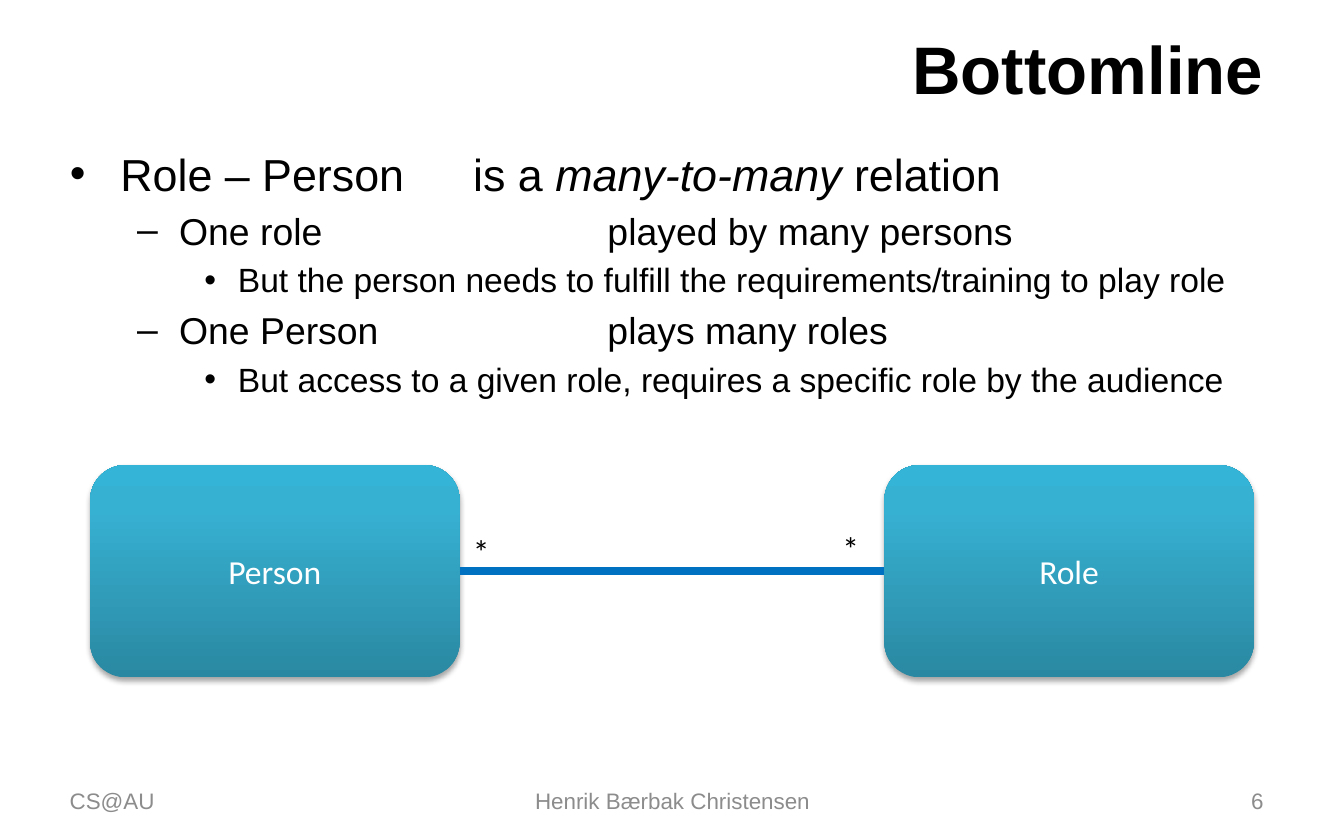
from typing import NamedTuple

from pptx import Presentation
from pptx import util as u
from pptx.dml.color import RGBColor
from pptx.enum import shapes, text
from pptx.oxml import parse_xml
from pptx.oxml.ns import nsdecls, qn

Inches, Pt = u.Inches, u.Pt
LEFT, CENTER, RIGHT = text.PP_ALIGN.LEFT, text.PP_ALIGN.CENTER, text.PP_ALIGN.RIGHT
TOP, MIDDLE = text.MSO_ANCHOR.TOP, text.MSO_ANCHOR.MIDDLE
BLACK, GREY, WHITE, BLUE = "000000", "8C8C8C", "FFFFFF", "0070C0"
GRADIENT = [(0, "2A88A2"), (80, "37B1D2"), (100, "34B4D6")]
LEVEL_SIZES = [24, 20, 18]
TAB_STOPS = [1, 2, 3, 4, 5]


class Label(NamedTuple):
    words: str
    left: float
    top: float
    width: float
    height: float
    size: int
    font: str
    color: str
    align: text.PP_ALIGN = LEFT
    anchor: text.MSO_ANCHOR = TOP


class Entity(NamedTuple):
    name: str
    left: float


class Bullet(NamedTuple):
    level: int
    runs: list[tuple[str, bool]]


BULLETS = [
    Bullet(0, [("Role – Person\tis a ", False), ("many-to-many", True), (" relation", False)]),
    Bullet(1, [("One role\t\t\tplayed by many persons", False)]),
    Bullet(2, [("But the person needs to fulfill the requirements/training to play role", False)]),
    Bullet(1, [("One Person\t\tplays many roles", False)]),
    Bullet(2, [("But access to a given role, requires a specific role by the audience", False)]),
]
LABELS = [
    Label("CS@AU", 0.42, 5.79, 2.33, 0.33, 12, "Arial", GREY, LEFT, MIDDLE),
    Label("Henrik Bærbak Christensen", 3.42, 5.79, 3.17, 0.33, 12, "Arial", GREY, CENTER, MIDDLE),
    Label("6", 7.17, 5.79, 2.33, 0.33, 12, "Arial", GREY, RIGHT, MIDDLE),
    Label("*", 3.42, 3.9, 0.58, 0.4, 18, "Calibri", BLACK),
    Label("*", 6.17, 3.88, 0.58, 0.4, 18, "Calibri", BLACK),
]
ENTITIES = [Entity("Person", 0.67), Entity("Role", 6.58)]


def rgb(color: str) -> RGBColor:
    return RGBColor.from_string(color)


def place(s, left: float, top: float, width: float, height: float) -> None:
    s.left, s.top, s.width, s.height = map(Inches, (left, top, width, height))


def add_run(p, words: str, size: int, font: str, color: str,
            bold: bool = False, italic: bool = False) -> None:
    r = p.add_run()
    r.text = words
    r.font.size, r.font.name = Pt(size), font
    r.font.bold, r.font.italic = bold, italic
    r.font.color.rgb = rgb(color)


def add_label(slide, label: Label) -> None:
    s = slide.shapes.add_textbox(*map(Inches, label[1:5]))
    tf = s.text_frame
    tf.word_wrap = True
    tf.vertical_anchor = label.anchor
    p = tf.paragraphs[0]
    p.alignment = label.align
    add_run(p, label.words, label.size, label.font, label.color)


def add_entity(slide, entity: Entity):
    s = slide.shapes.add_shape(shapes.MSO_SHAPE.ROUNDED_RECTANGLE, Inches(entity.left),
                               Inches(3.46), Inches(2.75), Inches(1.58))
    s.line.fill.background()
    stops = "".join(f'<a:gs pos="{pos * 1000}"><a:srgbClr val="{color}"/></a:gs>'
                    for pos, color in GRADIENT)
    s.fill.background()
    sp_pr = s._element.spPr
    sp_pr.replace(sp_pr.find(qn("a:noFill")), parse_xml(
        f'<a:gradFill {nsdecls("a")} rotWithShape="1"><a:gsLst>{stops}</a:gsLst>'
        '<a:lin ang="16200000" scaled="0"/></a:gradFill>'))
    sp_pr.append(parse_xml(
        f'<a:effectLst {nsdecls("a")}><a:outerShdw blurRad="{Pt(3.1)}" dist="{Pt(1.8)}" '
        'dir="5400000" rotWithShape="0"><a:srgbClr val="000000"><a:alpha val="35000"/>'
        '</a:srgbClr></a:outerShdw></a:effectLst>'))
    tf = s.text_frame
    tf.vertical_anchor = MIDDLE
    p = tf.paragraphs[0]
    p.alignment = CENTER
    add_run(p, entity.name, 18, "Calibri", WHITE)
    return s


def add_relation(slide, start, end) -> None:
    s = slide.shapes.add_connector(shapes.MSO_CONNECTOR.STRAIGHT, 0, 0, 0, 0)
    s.begin_connect(start, 3)
    s.end_connect(end, 1)
    s.line.color.rgb = rgb(BLUE)
    s.line.width = Pt(4.5)
    s._element.spPr.append(parse_xml(f'<a:effectLst {nsdecls("a")}/>'))


def fill_title(s, words: str) -> None:
    place(s, 0.5, 0.18, 9, 0.65)
    tf = s.text_frame
    tf.auto_size = text.MSO_AUTO_SIZE.NONE
    tf.vertical_anchor = MIDDLE
    p = tf.paragraphs[0]
    p.alignment = RIGHT
    add_run(p, words, 36, "Arial", BLACK, bold=True)


def fill_body(s, bullets: list[Bullet]) -> None:
    place(s, 0.42, 1.04, 9.08, 4.72)
    tf = s.text_frame
    tf.auto_size = text.MSO_AUTO_SIZE.NONE
    tabs = "".join(f'<a:tab pos="{Inches(stop)}" algn="l"/>' for stop in TAB_STOPS)
    for i, bullet in enumerate(bullets):
        p = tf.add_paragraph() if i else tf.paragraphs[0]
        p.level = bullet.level
        p._p.get_or_add_pPr().append(parse_xml(f'<a:tabLst {nsdecls("a")}>{tabs}</a:tabLst>'))
        if i == 0:
            p.space_before = Pt(0)
        for words, italic in bullet.runs:
            add_run(p, words, LEVEL_SIZES[bullet.level], "Arial", BLACK, italic=italic)


def main() -> None:
    prs = Presentation()
    prs.slide_width, prs.slide_height = Inches(10), Inches(6.25)
    slide = prs.slides.add_slide(prs.slide_layouts[1])
    fill_title(slide.shapes.title, "Bottomline")
    fill_body(slide.placeholders[1], BULLETS)
    person, role = [add_entity(slide, entity) for entity in ENTITIES]
    add_relation(slide, person, role)
    for label in LABELS:
        add_label(slide, label)
    prs.save("out.pptx")


if __name__ == "__main__":
    main()
